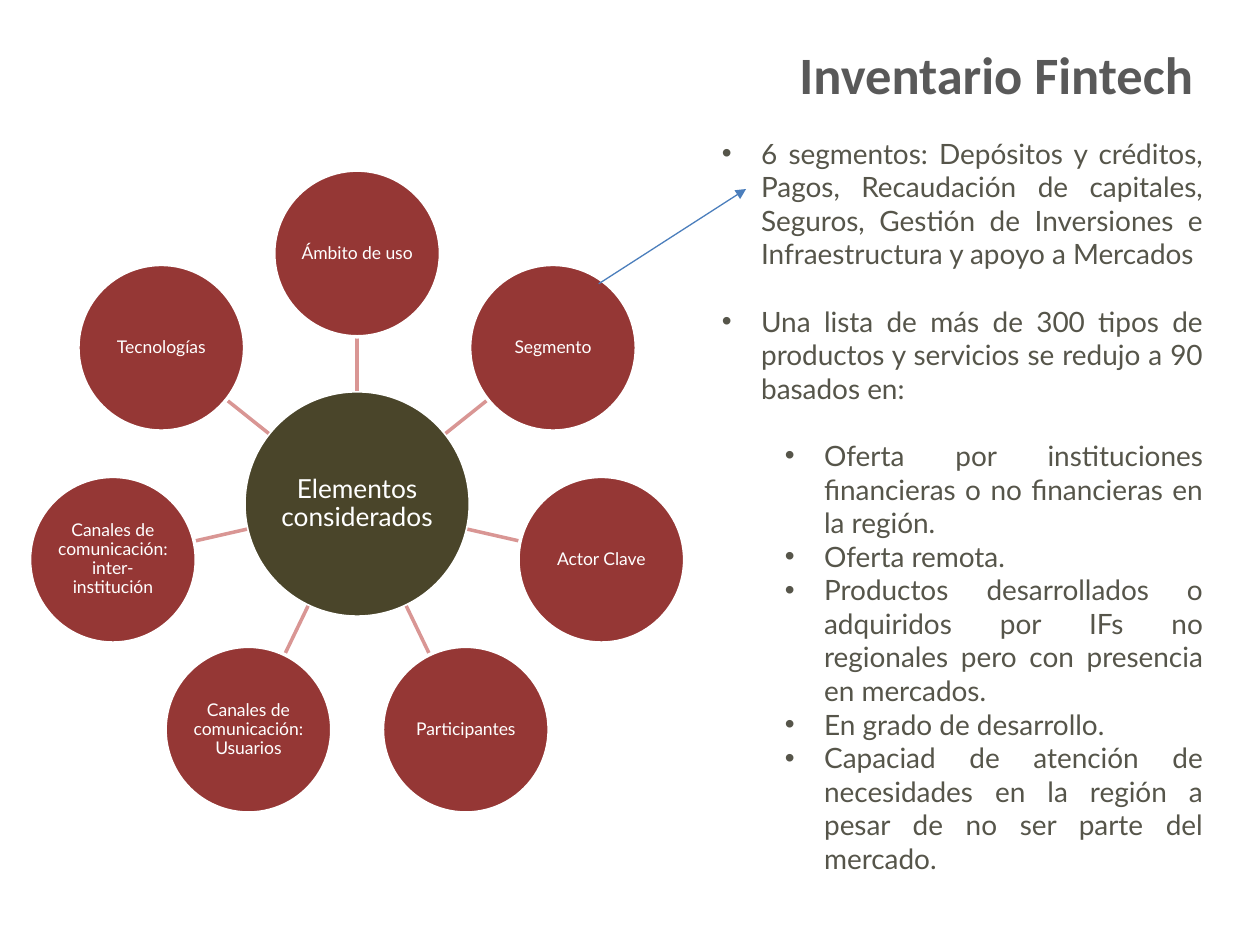
import math

from lxml import etree
from pptx import Presentation
from pptx.dml.color import RGBColor
from pptx.enum import shapes, text
from pptx.oxml.ns import qn
from pptx.util import Cm, Pt

HUES = {"title": "595959", "body": "56554A", "hub": "4A452A",
        "node": "953735", "spoke": "D99694", "arrow": "4B7EBC",
        "white": "FFFFFF"}


def hue(name):
    return RGBColor.from_string(HUES[name])


class Deck:
    """Holds the style and the current slide."""
    head, face = "Calibri", "Lato"

    def __init__(self):
        self.prs = Presentation()
        self.prs.slide_width, self.prs.slide_height = Cm(25.4), Cm(19.05)
        self.slide = self.prs.slides.add_slide(self.prs.slide_layouts[1])

    def run(self, para, words, size, color, face=None, bold=False):
        run = para.add_run()
        run.text = words
        font = run.font
        font.name, font.size, font.bold = face or self.face, Pt(size), bold
        font.color.rgb = hue(color)

    def place(self, holder, left, top, width, height):
        holder.left, holder.top = Cm(left), Cm(top)
        holder.width, holder.height = Cm(width), Cm(height)
        frame = holder.text_frame
        frame.word_wrap = True
        frame.auto_size = text.MSO_AUTO_SIZE.NONE
        frame.vertical_anchor = text.MSO_ANCHOR.TOP
        return frame

    def title(self, words, *box):
        para = self.place(self.slide.shapes.title, *box).paragraphs[0]
        para.alignment = text.PP_ALIGN.RIGHT
        self.run(para, words, 30, "title", self.head, True)

    def list(self, items, *box):
        frame = self.place(self.slide.placeholders[1], *box)
        for i, (level, gap, words) in enumerate(items):
            para = frame.add_paragraph() if i else frame.paragraphs[0]
            para.level = level
            para.alignment = text.PP_ALIGN.JUSTIFY
            props = para._p.get_or_add_pPr()
            props.set("marL", str(Cm(0.79 + 1.27 * level)))
            props.set("indent", str(Cm(-0.79)))
            etree.SubElement(props, qn("a:buFont"), typeface="Arial")
            etree.SubElement(props, qn("a:buChar"), char="•")
            para.space_before = Pt(gap)
            self.run(para, words, 16, "body")

    def disc(self, words, x, y, radius, color, size):
        disc = self.slide.shapes.add_shape(
            shapes.MSO_SHAPE.OVAL, Cm(x - radius), Cm(y - radius),
            Cm(2 * radius), Cm(2 * radius))
        disc.shadow.inherit = False
        disc.fill.solid()
        disc.fill.fore_color.rgb = hue(color)
        disc.line.color.rgb = hue("white")
        disc.line.width = Pt(2)
        frame = disc.text_frame
        frame.word_wrap = True
        frame.vertical_anchor = text.MSO_ANCHOR.MIDDLE
        frame.margin_left = frame.margin_right = Cm(0.03)
        frame.margin_top = frame.margin_bottom = Cm(0.03)
        para = frame.paragraphs[0]
        para.alignment = text.PP_ALIGN.CENTER
        para.line_spacing = 0.9
        self.run(para, words, size, "white")

    def line(self, start, end, color, width, tip=False):
        line = self.slide.shapes.add_connector(
            shapes.MSO_CONNECTOR.STRAIGHT, *map(Cm, start + end))
        line.line.color.rgb = hue(color)
        line.line.width = Pt(width)
        if tip:
            etree.SubElement(line.line._get_or_add_ln(), qn("a:tailEnd"),
                             type="triangle")
        etree.SubElement(line._element.spPr, qn("a:effectLst"))


def main():
    deck = Deck()

    # Title and list
    deck.title("Inventario Fintech", 6.78, 0.71, 17.53, 1.55)
    deck.list([
        (0, 0, "6 segmentos: Depósitos y créditos, Pagos, Recaudación de "
               "capitales, Seguros, Gestión de Inversiones e "
               "Infraestructura y apoyo a Mercados"),
        (0, 19.2, "Una lista de más de 300 tipos de productos y servicios "
                  "se redujo a 90 basados en:"),
        (1, 19.2, "Oferta por instituciones financieras o no financieras "
                  "en la región."),
        (1, 0, "Oferta remota."),
        (1, 0, "Productos desarrollados o adquiridos por IFs no regionales "
               "pero con presencia en mercados."),
        (1, 0, "En grado de desarrollo."),
        (1, 0, "Capaciad de atención de necesidades en la región a pesar "
               "de no ser parte del mercado."),
    ], 14.3, 2.62, 10.21, 15.98)

    # Wheel: hub, spokes and nodes, clockwise from the top
    x, y, hub, node, orbit = 7.2, 10.16, 2.28, 1.68, 5.05
    deck.disc("Elementos considerados", x, y, hub, "hub", 15)
    names = ["Ámbito de uso", "Segmento", "Actor Clave", "Participantes",
             "Canales de comunicación: Usuarios",
             "Canales de comunicación: inter-institución", "Tecnologías"]
    for i, name in enumerate(names):
        turn = 2 * math.pi * i / len(names)

        def spot(dist):
            return x + dist * math.sin(turn), y - dist * math.cos(turn)

        deck.line(spot(hub), spot(orbit - node), "spoke", 2)
        deck.disc(name, *spot(orbit), node, "node", 10)

    # Arrow from the segment node to the list
    deck.line((12.07, 5.72), (15.04, 3.81), "arrow", 0.75, tip=True)

    deck.prs.save("out.pptx")


if __name__ == "__main__":
    main()
